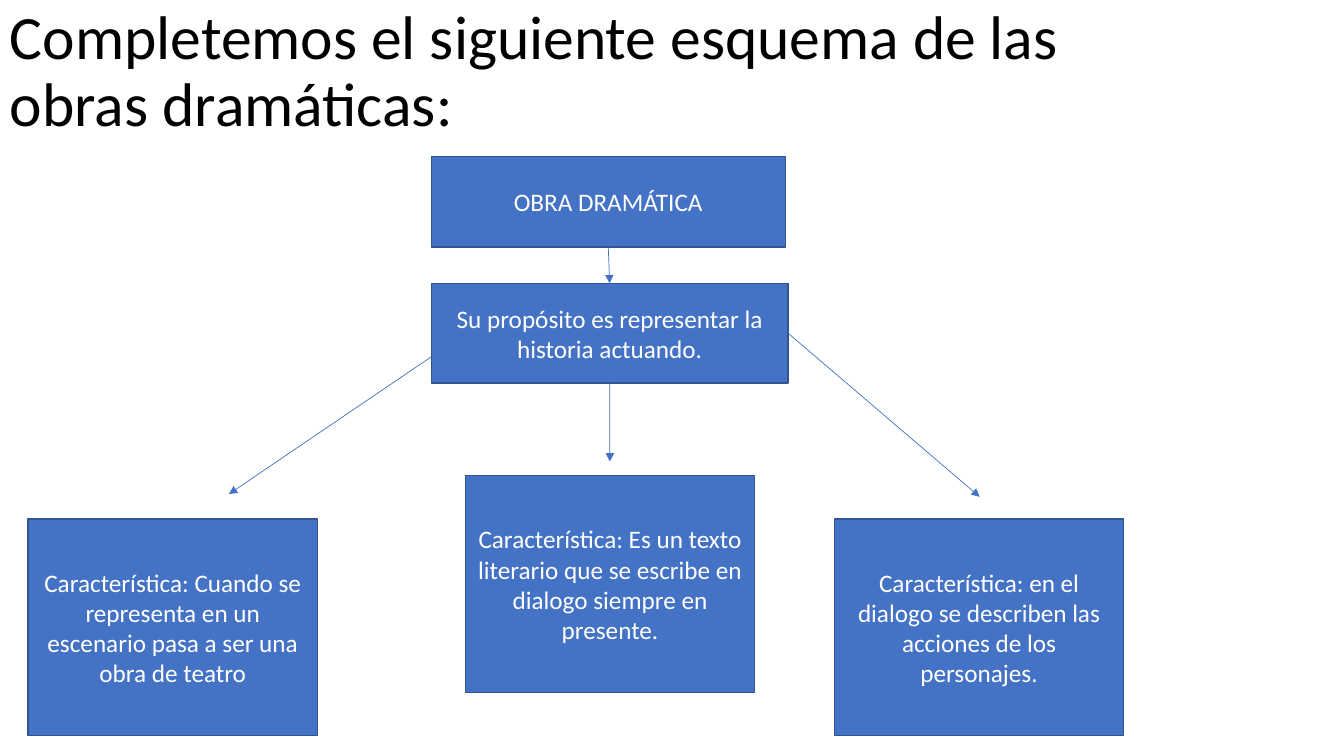
import pptx
import pptx.util
import pptx.dml.color
import pptx.enum.shapes
import pptx.enum.text
import pptx.oxml
import pptx.oxml.ns
import lxml.etree

Cm = pptx.util.Cm
Pt = pptx.util.Pt
BLUE = pptx.dml.color.RGBColor(0x44, 0x72, 0xC4)
DARK_BLUE = pptx.dml.color.RGBColor(0x32, 0x54, 0x91)
WHITE = pptx.dml.color.RGBColor(0xFF, 0xFF, 0xFF)
BLACK = pptx.dml.color.RGBColor(0x00, 0x00, 0x00)
LEFT = pptx.enum.text.PP_ALIGN.LEFT
CENTER = pptx.enum.text.PP_ALIGN.CENTER
MIDDLE = pptx.enum.text.MSO_ANCHOR.MIDDLE

TITLE_FORMAT = {"size": Pt(44), "name": "Calibri"}
BOX_FORMAT = {"size": Pt(18), "name": "Calibri"}


def write_text(holder, wording, font_format, color, alignment, spacing):
    frame = holder.text_frame
    frame.word_wrap = True
    frame.vertical_anchor = MIDDLE
    paragraph = frame.paragraphs[0]
    paragraph.alignment = alignment
    paragraph.line_spacing = spacing
    run = paragraph.add_run()
    run.text = wording
    run.font.color.rgb = color
    for attribute, value in font_format.items():
        setattr(run.font, attribute, value)


presentation = pptx.Presentation()
presentation.slide_width = Cm(33.87)
presentation.slide_height = Cm(19.05)
slide = presentation.slides.add_slide(presentation.slide_layouts[6])

heading = slide.shapes.add_textbox(Cm(0), Cm(0), Cm(29.21), Cm(3.68))
write_text(heading, "Completemos el siguiente esquema de las obras dramáticas:",
           TITLE_FORMAT, BLACK, LEFT, 0.9)

concepts = [
    ("OBRA DRAMÁTICA", 10.87, 3.94, 8.92, 2.29),
    ("Su propósito es representar la historia actuando.", 10.87, 7.14, 8.99, 2.51),
    ("Característica: Cuando se representa en un escenario pasa a ser una obra de teatro",
     0.71, 13.08, 7.29, 5.46),
    ("Característica: Es un texto literario que se escribe en dialogo siempre en presente.",
     11.73, 11.99, 7.29, 5.46),
    ("Característica: en el dialogo se describen las acciones de los personajes.",
     21.03, 13.08, 7.29, 5.46),
]
boxes = []
for wording, *place in concepts:
    box = slide.shapes.add_shape(
        pptx.enum.shapes.MSO_SHAPE.RECTANGLE, *[Cm(length) for length in place])
    box.shadow.inherit = False
    box.fill.solid()
    box.fill.fore_color.rgb = BLUE
    box.line.color.rgb = DARK_BLUE
    box.line.width = Pt(1)
    write_text(box, wording, BOX_FORMAT, WHITE, CENTER, 1.0)
    boxes.append(box)

drama, purpose = boxes[:2]
arrows = [
    ((15.33, 6.23, 15.36, 7.14), (drama, 2), (purpose, 0)),
    ((10.87, 8.99, 5.77, 12.45), None, None),
    ((19.86, 8.4, 24.69, 12.52), (purpose, 3), None),
    ((15.37, 9.65, 15.37, 11.63), (purpose, 2), None),
]
for ends, origin, target in arrows:
    arrow = slide.shapes.add_connector(
        pptx.enum.shapes.MSO_CONNECTOR.STRAIGHT, *[Cm(length) for length in ends])
    if origin:
        arrow.begin_connect(*origin)
    if target:
        arrow.end_connect(*target)
    arrow.line.color.rgb = BLUE
    arrow.line.width = Pt(0.5)
    properties = arrow._element.spPr
    line_properties = properties.find(pptx.oxml.ns.qn("a:ln"))
    lxml.etree.SubElement(line_properties, pptx.oxml.ns.qn("a:tailEnd"), type="triangle")
    lxml.etree.SubElement(properties, pptx.oxml.ns.qn("a:effectLst"))

presentation.save("out.pptx")
